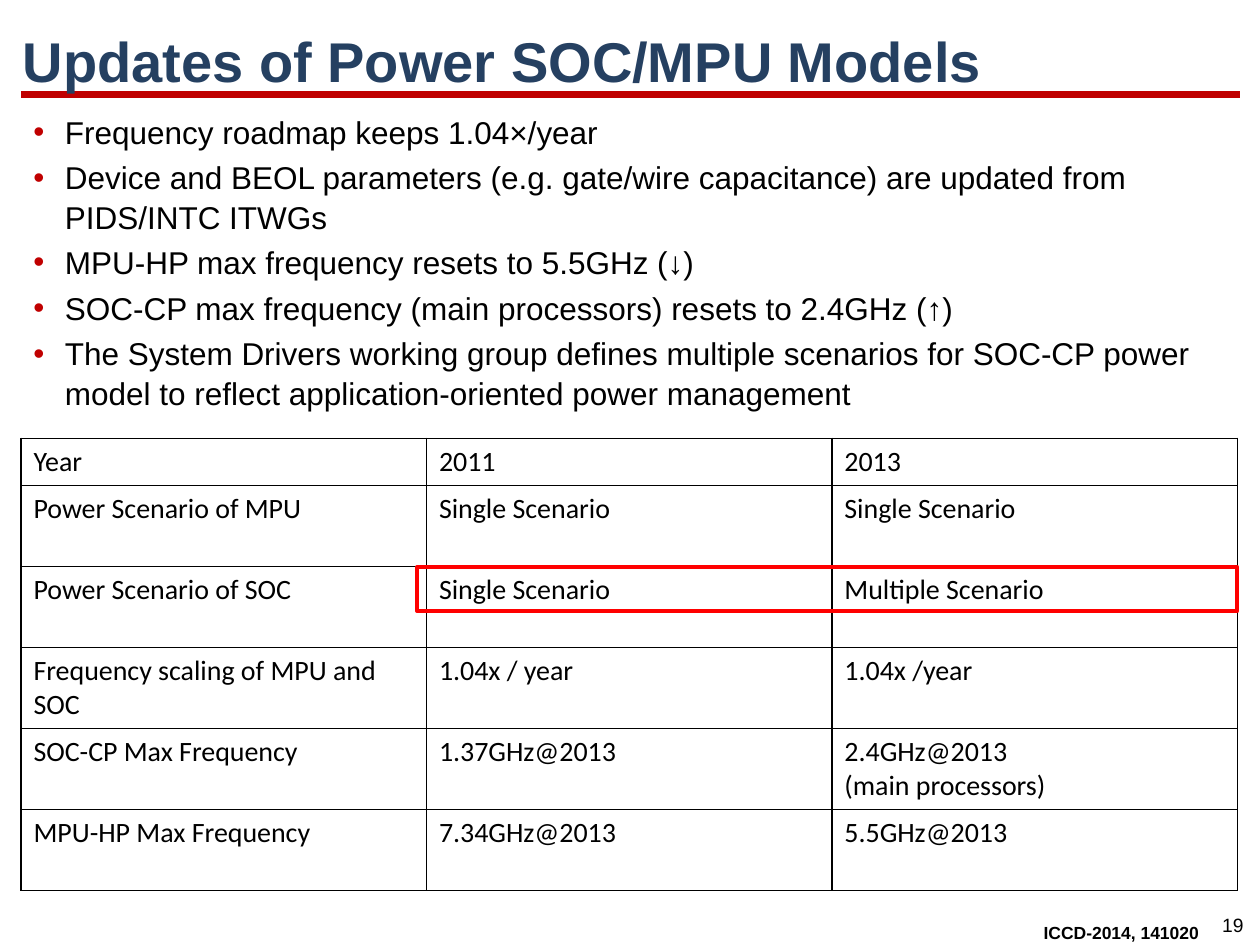
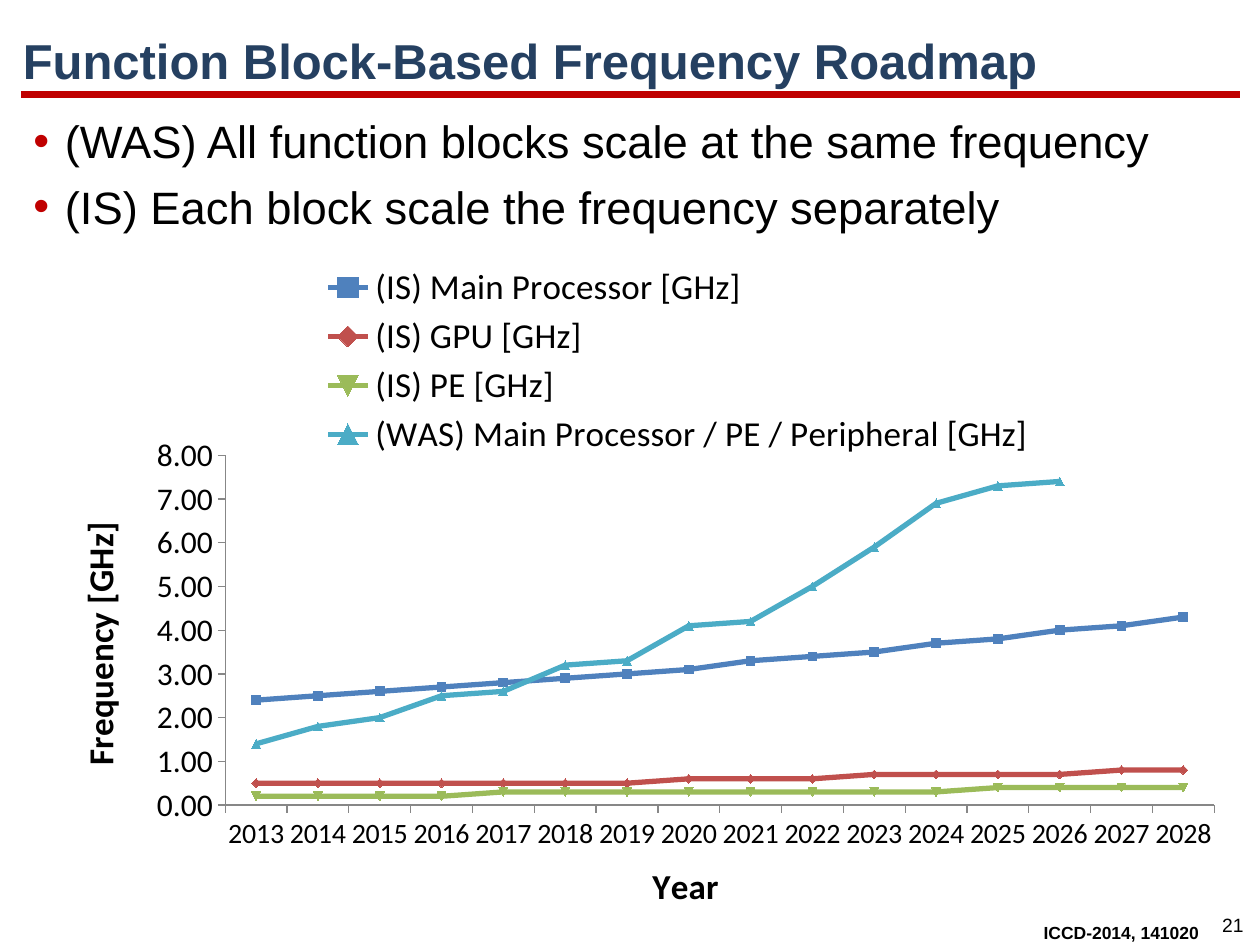
from lxml.etree import SubElement
from pptx import Presentation
from pptx.chart.data import CategoryChartData
from pptx.dml.color import RGBColor
from pptx.enum.chart import XL_CHART_TYPE, XL_LEGEND_POSITION, XL_TICK_MARK
from pptx.enum.shapes import MSO_CONNECTOR, MSO_SHAPE
from pptx.enum.text import MSO_ANCHOR, PP_ALIGN
from pptx.oxml import parse_xml
from pptx.oxml.ns import nsdecls, qn
from pptx.util import Pt

BLACK, NAVY, DARK_RED, RED = "000000", "254061", "C00000", "FF0000"
AXIS_GREY = "878787"
BODY_FONT, DATA_FONT = "Arial", "Calibri"
FOOTER = "ICCD-2014, 141020"

MODEL_UPDATES = [
    "Frequency roadmap keeps 1.04×/year",
    "Device and BEOL parameters (e.g. gate/wire capacitance) are updated from PIDS/INTC ITWGs",
    "MPU-HP max frequency resets to 5.5GHz (↓)",
    "SOC-CP max frequency (main processors) resets to 2.4GHz (↑)",
    "The System Drivers working group defines multiple scenarios for SOC-CP power model "
    "to reflect application-oriented power management",
]
MODEL_ROWS = [
    ("Year", "2011", "2013"),
    ("Power Scenario of MPU", "Single Scenario", "Single Scenario"),
    ("Power Scenario of SOC", "Single Scenario", "Multiple Scenario"),
    ("Frequency scaling of MPU and SOC", "1.04x / year", "1.04x /year"),
    ("SOC-CP Max Frequency", "1.37GHz@2013", "2.4GHz@2013\v(main processors)"),
    ("MPU-HP Max Frequency", "7.34GHz@2013", "5.5GHz@2013"),
]
SCALING_RULES = [
    "(WAS) All function blocks scale at the same frequency",
    "(IS) Each block scale the frequency separately",
]
YEARS = range(2013, 2029)
FREQUENCIES = [
    ("(IS) Main Processor [GHz]", "4F81BD",
     [2.4, 2.5, 2.6, 2.7, 2.8, 2.9, 3, 3.1, 3.3, 3.4, 3.5, 3.7, 3.8, 4, 4.1, 4.3]),
    ("(IS) GPU [GHz]", "C0504D",
     [0.5] * 7 + [0.6] * 3 + [0.7] * 4 + [0.8] * 2),
    ("(IS) PE [GHz]", "9BBB59",
     [0.2] * 4 + [0.3] * 8 + [0.4] * 4),
    ("(WAS) Main Processor / PE / Peripheral [GHz]", "4BACC6",
     [1.4, 1.8, 2, 2.5, 2.6, 3.2, 3.3, 4.1, 4.2, 5, 5.9, 6.9, 7.3, 7.4, None, None]),
]


def rgb(color):
    return RGBColor.from_string(color)


def set_font(font, name, size, color=BLACK, bold=False):
    font.name, font.size, font.bold = name, Pt(size), bold
    font.color.rgb = rgb(color)


def add_text(slide, box, lines, size, color=BLACK, bold=False, align=PP_ALIGN.LEFT,
             anchor=MSO_ANCHOR.TOP, wrap=True):
    """Add a text box with one paragraph per line and return its paragraphs."""
    tf = slide.shapes.add_textbox(*map(Pt, box)).text_frame
    tf.word_wrap = wrap
    tf.vertical_anchor = anchor
    tf.text = "\n".join(lines)
    for p in tf.paragraphs:
        p.alignment = align
        set_font(p.font, BODY_FONT, size, color, bold)
    return tf.paragraphs


def add_bullets(slide, lines, size, height):
    for p in add_text(slide, (12, 60, 696, height), lines, size):
        p.space_before = Pt(round(size * 0.2, 1))
        p.line_spacing = 1.04
        pPr = p._p.get_or_add_pPr()
        pPr.set("marL", str(Pt(18)))
        pPr.set("indent", str(Pt(-18)))
        bullet = (f'<a:buClr {nsdecls("a")}><a:srgbClr val="{DARK_RED}"/></a:buClr>',
                  f'<a:buFont {nsdecls("a")} typeface="{BODY_FONT}"/>',
                  f'<a:buChar {nsdecls("a")} char="•"/>')
        defRPr = pPr.find(qn("a:defRPr"))
        for xml in bullet:
            defRPr.addprevious(parse_xml(xml))


def add_rule(slide):
    line = slide.shapes.add_connector(MSO_CONNECTOR.STRAIGHT, Pt(12), Pt(54), Pt(708.5), Pt(54))
    line.line.color.rgb = rgb(DARK_RED)
    line.line.width = Pt(4.5)
    SubElement(line._element.spPr, qn("a:effectLst"))


def add_base_slide(prs, title, title_size, number):
    """Add a slide with the shared footer, page number, rule and title."""
    slide = prs.slides.add_slide(prs.slide_layouts[6])
    add_text(slide, (690.5, 518.4, 28, 21), [str(number)], 11, align=PP_ALIGN.CENTER, wrap=False)
    add_text(slide, (499, 523.4, 193, 19.4), [FOOTER], 10, bold=True, align=PP_ALIGN.RIGHT)
    add_rule(slide)
    add_text(slide, (6, 12, 714, 45), [title], title_size, NAVY, True, anchor=MSO_ANCHOR.MIDDLE)
    return slide


def border_cell(cell):
    tcPr = cell._tc.get_or_add_tcPr()
    for side in "LRTB":
        tcPr.append(parse_xml(
            f'<a:ln{side} {nsdecls("a")} w="{Pt(1)}"><a:solidFill>'
            f'<a:srgbClr val="{BLACK}"/></a:solidFill></a:ln{side}>'))


def add_model_table(slide):
    heights = [26.9] + [46.3] * (len(MODEL_ROWS) - 1)
    table = slide.shapes.add_table(len(MODEL_ROWS), 3, Pt(12), Pt(250.5),
                                   Pt(695), Pt(sum(heights))).table
    table.first_row = table.horz_banding = False
    for column in table.columns:
        column.width = Pt(231.7)
    for row, height, texts in zip(table.rows, heights, MODEL_ROWS):
        row.height = Pt(height)
        for cell, text in zip(row.cells, texts):
            cell.text = text
            set_font(cell.text_frame.paragraphs[0].font, DATA_FONT, 16)
            border_cell(cell)
            cell.fill.background()


def add_highlight(slide, box):
    sp = slide.shapes.add_shape(MSO_SHAPE.RECTANGLE, *map(Pt, box))
    sp.shadow.inherit = False
    sp.fill.background()
    sp.line.color.rgb = rgb(RED)
    sp.line.width = Pt(2.25)


def layout_xml(x, y, w, h, target=""):
    """Return a manual chart layout, in fractions of the chart."""
    return parse_xml(
        f'<c:layout {nsdecls("c")}><c:manualLayout>{target}'
        '<c:xMode val="edge"/><c:yMode val="edge"/>'
        f'<c:x val="{x}"/><c:y val="{y}"/><c:w val="{w}"/><c:h val="{h}"/>'
        '</c:manualLayout></c:layout>')


def clear_layout(element):
    for layout in element.findall(qn("c:layout")):
        element.remove(layout)


def style_axis(axis, title, size):
    axis.has_major_gridlines = False
    axis.major_tick_mark = XL_TICK_MARK.OUTSIDE
    axis.minor_tick_mark = XL_TICK_MARK.NONE
    axis.format.line.color.rgb = rgb(AXIS_GREY)
    set_font(axis.tick_labels.font, DATA_FONT, size)
    axis.axis_title.text_frame.text = title
    set_font(axis.axis_title.text_frame.paragraphs[0].font, DATA_FONT, 20, bold=True)


def place_chart_parts(chart):
    plot_area = chart._chartSpace.chart.plotArea
    clear_layout(plot_area)
    plot_area.insert(0, layout_xml(0.15, 0.31, 0.83, 0.52, '<c:layoutTarget val="inner"/>'))
    chart.has_legend = True
    chart.legend.position = XL_LEGEND_POSITION.TOP
    chart.legend.include_in_layout = False
    set_font(chart.legend.font, DATA_FONT, 20)
    legend = chart.legend._element
    clear_layout(legend)
    legend.find(qn("c:legendPos")).addnext(layout_xml(0.22, 0.02, 0.62, 0.3))


def add_frequency_chart(slide):
    data = CategoryChartData()
    data.categories = [str(year) for year in YEARS]
    for name, _, values in FREQUENCIES:
        data.add_series(name, values)
    chart = slide.shapes.add_chart(XL_CHART_TYPE.LINE_MARKERS, Pt(26.6), Pt(141),
                                   Pt(681), Pt(384.5), data).chart
    chart.has_title = False
    set_font(chart.font, DATA_FONT, 20)
    chart.plots[0].vary_by_categories = False
    for series, (_, color, _) in zip(chart.plots[0].series, FREQUENCIES):
        series.smooth = False
        series.format.line.color.rgb = rgb(color)
        series.format.line.width = Pt(3)
        series.marker.size = 5
        series.marker.format.fill.solid()
        series.marker.format.fill.fore_color.rgb = rgb(color)
        series.marker.format.line.color.rgb = rgb(color)
    style_axis(chart.category_axis, "Year", 16)
    value_axis = chart.value_axis
    style_axis(value_axis, "Frequency [GHz]", 18)
    value_axis.minimum_scale, value_axis.maximum_scale, value_axis.major_unit = 0, 8, 1
    value_axis.tick_labels.number_format = "0.00"
    value_axis.tick_labels.number_format_is_linked = False
    place_chart_parts(chart)


def main():
    prs = Presentation()
    prs.slide_width, prs.slide_height = Pt(720), Pt(540)

    slide = add_base_slide(prs, "Updates of Power SOC/MPU Models", 32, 19)
    add_bullets(slide, MODEL_UPDATES, 18, 450)
    add_model_table(slide)
    add_highlight(slide, (238.3, 324, 468.7, 25.2))

    slide = add_base_slide(prs, "Function Block-Based Frequency Roadmap", 28, 21)
    add_bullets(slide, SCALING_RULES, 25.9, 66)
    add_frequency_chart(slide)

    prs.save("out.pptx")


if __name__ == "__main__":
    main()
